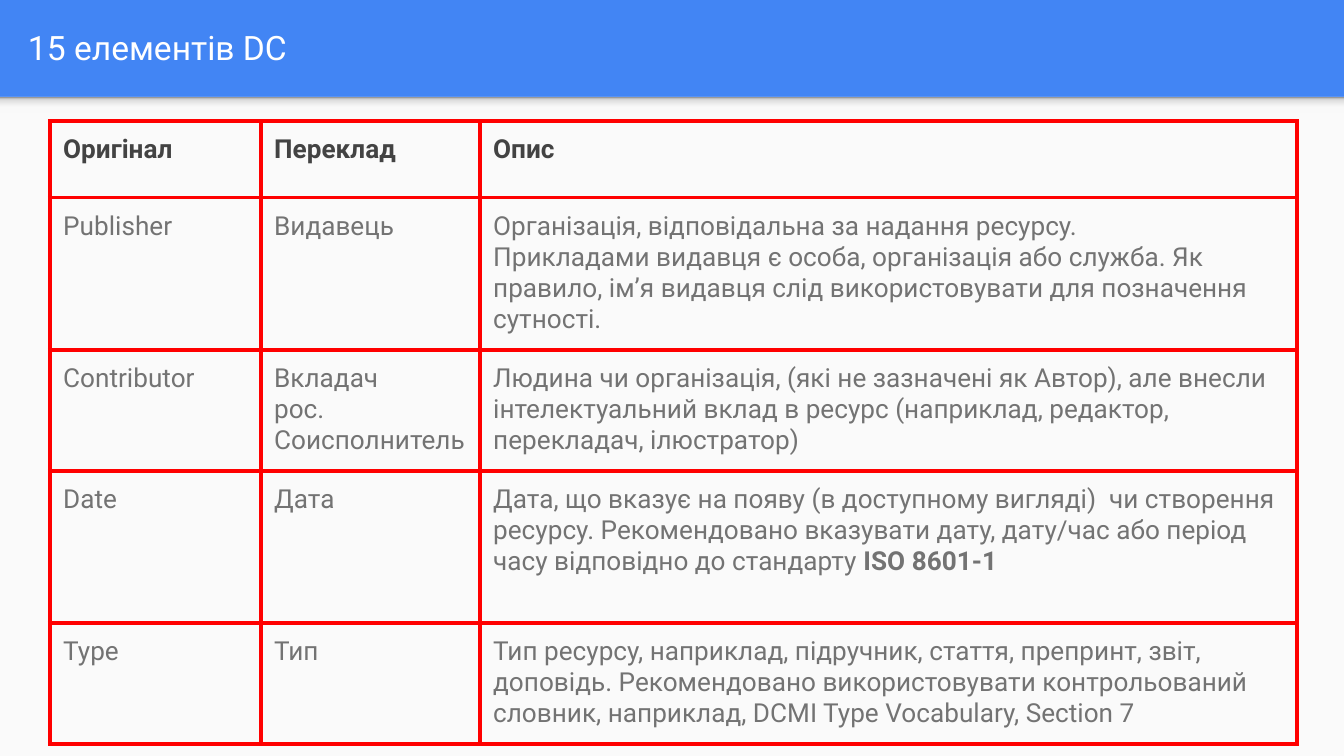
from copy import deepcopy

from lxml.etree import SubElement
from pptx import Presentation
from pptx.dml.color import RGBColor as RGB
from pptx.enum.shapes import MSO_SHAPE as SHAPE
from pptx.enum.text import MSO_ANCHOR as ANCHOR
from pptx.oxml.ns import qn
from pptx.util import Inches, Pt

WIDTH = 10
HEIGHT = WIDTH * 9 / 16
BAR = 0.72
COLORS = {
    "bar": "4285F4", "page": "FAFAFA", "title": "FFFFFF",
    "head": "434343", "body": "737373", "border": "FF0000",
}
SHADOW = [(0, "F9F9F9"), (0.36, "F9F9F9"), (0.8, "DEDEDE"), (1, "999999")]
INSETS = {f"margin_{side}": Inches(0.1) for side in ("left", "right", "top", "bottom")}
COLS = [1.57, 1.63, 6.08]
ROWS = [0.57, 1.1, 0.88, 1.13, 0.88]
ELEMENTS = [
    ("**Оригінал**", "**Переклад**", "**Опис**"),
    ("Publisher", "Видавець",
     "Організація, відповідальна за надання ресурсу.\n"
     "Прикладами видавця є особа, організація або служба. Як правило, "
     "ім’я видавця слід використовувати для позначення сутності."),
    ("Contributor", "Вкладач\nрос. Соисполнитель",
     "Людина чи організація, (які не зазначені як Автор), але внесли "
     "інтелектуальний вклад в ресурс (наприклад, редактор, перекладач, ілюстратор)"),
    ("Date", "Дата",
     "Дата, що вказує на появу (в доступному вигляді)  чи створення ресурсу. "
     "Рекомендовано вказувати дату, дату/час або період часу відповідно "
     "до стандарту **ISO 8601-1**"),
    ("Type", "Тип",
     "Тип ресурсу, наприклад, підручник, стаття, препринт, звіт, доповідь. "
     "Рекомендовано використовувати контрольований словник, наприклад, "
     "DCMI Type Vocabulary, Section 7"),
]


def color(name):
    return RGB.from_string(COLORS[name])


def set_all(target, values):
    for name, value in values.items():
        setattr(target, name, value)


def write(tf, text, size, ink):
    for i, line in enumerate(text.split("\n")):
        p = tf.paragraphs[0] if i == 0 else tf.add_paragraph()
        for j, part in enumerate(line.split("**")):
            if part:
                r = p.add_run()
                r.text = part
                set_all(r.font, {"name": "Roboto", "size": Pt(size), "bold": j % 2 == 1})
                r.font.color.rgb = color(ink)


def add_band(s, top, height):
    sp = s.shapes.add_shape(SHAPE.RECTANGLE, 0, Inches(top), Inches(WIDTH), Inches(height))
    sp.shadow.inherit = False
    sp.line.fill.background()
    return sp


def add_page(s):
    sp = add_band(s, BAR, HEIGHT - BAR)
    sp.fill.solid()
    sp.fill.fore_color.rgb = color("page")


def add_bar_shadow(s):
    fill = add_band(s, BAR, 0.12).fill
    fill.gradient()
    fill.gradient_angle = 90
    stops = fill.gradient_stops
    for _ in SHADOW[len(stops):]:
        stops._gsLst.append(deepcopy(stops._gsLst[0]))
    for stop, (position, shade) in zip(fill.gradient_stops, SHADOW):
        stop.position = position
        stop.color.rgb = RGB.from_string(shade)


def add_title(s, text):
    box = s.shapes.add_textbox(Inches(0.11), Inches(0.02), Inches(9.65), Inches(0.66))
    tf = box.text_frame
    set_all(tf, {**INSETS, "word_wrap": True, "vertical_anchor": ANCHOR.MIDDLE})
    write(tf, text, 18, "title")


def add_borders(cell):
    tcPr = cell._tc.get_or_add_tcPr()
    for i, side in enumerate("LRTB"):
        ln = SubElement(tcPr, qn(f"a:ln{side}"), w=str(Pt(2.25)))
        fill = SubElement(ln, qn("a:solidFill"))
        SubElement(fill, qn("a:srgbClr"), val=COLORS["border"])
        tcPr.insert(i, ln)


def add_elements_table(s):
    frame = s.shapes.add_table(len(ROWS), len(COLS), Inches(0.37), Inches(0.9),
                               Inches(sum(COLS)), Inches(sum(ROWS)))
    table = frame.table
    set_all(table, {"first_row": False, "horz_banding": False})
    for column, width in zip(table.columns, COLS):
        column.width = Inches(width)
    for i, (row, height) in enumerate(zip(table.rows, ROWS)):
        row.height = Inches(height)
        for cell, text in zip(row.cells, ELEMENTS[i]):
            set_all(cell, INSETS)
            cell.fill.background()
            add_borders(cell)
            write(cell.text_frame, text, 14, "body" if i else "head")


def main():
    prs = Presentation()
    set_all(prs, {"slide_width": Inches(WIDTH), "slide_height": Inches(HEIGHT)})
    s = prs.slides.add_slide(prs.slide_layouts[6])
    s.background.fill.solid()
    s.background.fill.fore_color.rgb = color("bar")
    add_page(s)
    add_bar_shadow(s)
    add_title(s, "15 елементів DC")
    add_elements_table(s)
    prs.save("out.pptx")


if __name__ == "__main__":
    main()
